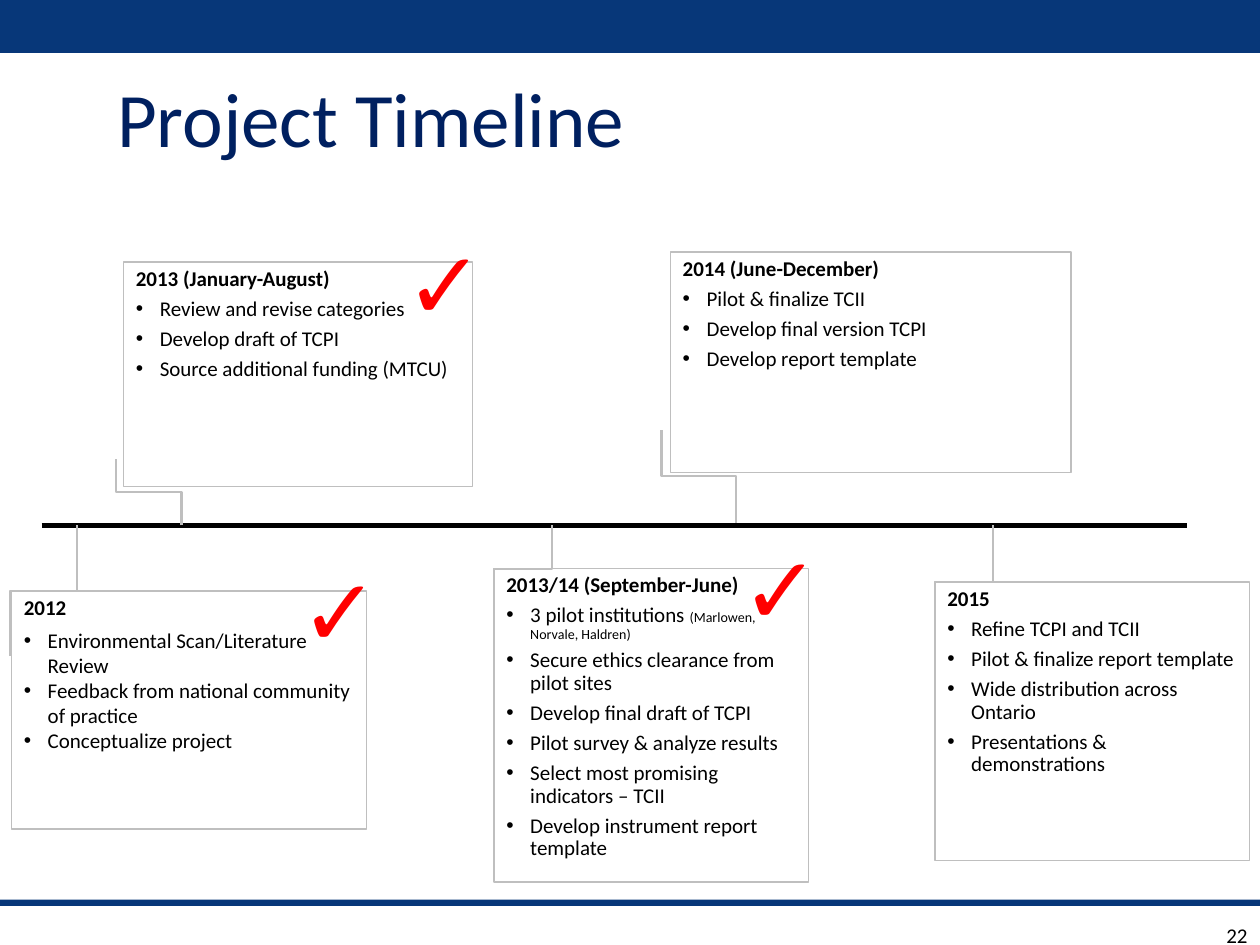
"""Build the project timeline slide."""
from dataclasses import dataclass

import pptx
import pptx.dml.color
import pptx.enum.shapes
import pptx.enum.text
import pptx.util
from lxml import etree
from pptx.dml.color import RGBColor
from pptx.enum.shapes import MSO_CONNECTOR, MSO_SHAPE
from pptx.enum.text import MSO_ANCHOR, MSO_AUTO_SIZE, PP_ALIGN
from pptx.oxml.ns import qn
from pptx.util import Inches, Pt

NAVY = RGBColor(0x07, 0x37, 0x79)
TITLE_BLUE = RGBColor(0x00, 0x20, 0x60)
GREY = RGBColor(0xBF, 0xBF, 0xBF)
BLACK = RGBColor(0, 0, 0)
WHITE = RGBColor(0xFF, 0xFF, 0xFF)
RED = RGBColor(0xFF, 0, 0)
AXIS_Y = 4.17


@dataclass
class Event:
    """A timeline card with its elbow line and optional check mark."""
    heading: str
    items: list[str | tuple[str, str]]
    box: tuple[float, float, float, float]
    start: tuple[float, float]
    end: tuple[float, float]
    check: tuple[float, float] | None = None
    tight: bool = True


EVENTS = [
    Event("2014 (June-December)",
          ["Pilot & finalize TCII", "Develop final version TCPI", "Develop report template"],
          (5.32, 2, 3.18, 1.75), (5.84, 4.15), (5.25, 3.41)),
    Event("2015",
          ["Refine TCPI and TCII", "Pilot & finalize report template",
           "Wide distribution across Ontario", "Presentations & demonstrations"],
          (7.42, 4.62, 2.5, 2.21), (7.88, AXIS_Y), (7.42, 5.07)),
    Event("2012",
          ["Environmental Scan/Literature Review",
           "Feedback from national community of practice", "Conceptualize project"],
          (0.09, 4.69, 2.82, 1.89), (0.61, AXIS_Y), (0.08, 5.21), (2.29, 4.33), False),
    Event("2013 (January-August)",
          ["Review and revise categories", "Develop draft of TCPI",
           "Source additional funding (MTCU)"],
          (0.98, 2.08, 2.77, 1.78), (1.44, AXIS_Y), (0.92, 3.64), (3.12, 1.74)),
    Event("2013/14 (September-June)",
          [("3 pilot institutions ", "(Marlowen, Norvale, Haldren)"),
           "Secure ethics clearance from pilot sites", "Develop final draft of TCPI",
           "Pilot survey & analyze results", "Select most promising indicators – TCII",
           "Develop instrument report template"],
          (3.92, 4.51, 2.5, 2.49), (4.38, AXIS_Y), (3.92, 4.86), (5.79, 4.16)),
]


def style(r, size: float, color: RGBColor = BLACK, bold: bool = False,
          font: str = "Calibri") -> None:
    """Format one run."""
    r.font.name, r.font.size, r.font.bold = font, Pt(size), bold
    r.font.color.rgb = color


def add_rect(s, box: tuple[float, float, float, float], fill: RGBColor):
    """Add a flat rectangle without an outline."""
    sp = s.shapes.add_shape(MSO_SHAPE.RECTANGLE, *map(Inches, box))
    sp.shadow.inherit = False
    sp.fill.solid()
    sp.fill.fore_color.rgb = fill
    sp.line.fill.background()
    return sp


def add_line(s, kind: MSO_CONNECTOR, ends: tuple[float, float, float, float],
             color: RGBColor, width: float):
    """Add a connector without a shadow."""
    cn = s.shapes.add_connector(kind, *map(Inches, ends))
    cn.line.color.rgb = color
    cn.line.width = Pt(width)
    etree.SubElement(cn._element.spPr, qn("a:effectLst"))
    return cn


def add_elbow(s, start: tuple[float, float], end: tuple[float, float]) -> None:
    """Add an elbow that leaves the axis vertically and turns halfway."""
    (x1, y1), (x2, y2) = start, end
    cx, cy = (x1 + x2) / 2, (y1 + y2) / 2
    half_w, half_h = abs(y2 - y1) / 2, abs(x2 - x1) / 2
    cn = add_line(s, MSO_CONNECTOR.ELBOW,
                  (cx - half_w, cy - half_h, cx + half_w, cy + half_h), GREY, 1.25)
    xfrm = cn._element.spPr.find(qn("a:xfrm"))
    upward = y2 < y1
    xfrm.set("rot", str((270 if upward else 90) * 60000))
    if upward:
        xfrm.set("flipV", "1")


def add_text(s, text: str, box: tuple[float, float, float, float], wrap: bool = True):
    """Add a one-paragraph text box and return its paragraph."""
    tf = s.shapes.add_textbox(*map(Inches, box)).text_frame
    tf.word_wrap = wrap
    tf.text = text
    return tf.paragraphs[0]


def add_bullet(p) -> None:
    """Give a paragraph a hanging bullet."""
    pPr = p._p.get_or_add_pPr()
    pPr.set("marL", str(Inches(0.19)))
    pPr.set("indent", str(-Inches(0.19)))
    etree.SubElement(pPr, qn("a:buFont")).set("typeface", "Arial")
    etree.SubElement(pPr, qn("a:buChar")).set("char", "•")


def add_event(s, event: Event) -> None:
    """Draw one card, its elbow and its check mark."""
    sp = add_rect(s, event.box, WHITE)
    sp.line.color.rgb = GREY
    sp.line.width = Pt(0.75)
    tf = sp.text_frame
    tf.word_wrap = True
    tf.vertical_anchor = MSO_ANCHOR.TOP
    for i, item in enumerate([event.heading, *event.items]):
        p = tf.add_paragraph() if i else tf.paragraphs[0]
        p.alignment = PP_ALIGN.LEFT
        main, note = item if isinstance(item, tuple) else (item, "")
        p.text = main
        style(p.runs[0], 12, bold=i == 0)
        if note:
            r = p.add_run()
            r.text = note
            style(r, 8)
        if i == 0 or event.tight:
            p.line_spacing = 0.9
            p.space_after = Pt(4.2)
        if i:
            add_bullet(p)
    add_elbow(s, event.start, event.end)
    if event.check:
        p = add_text(s, "✓", (*event.check, 0.96, 1.01), wrap=False)
        style(p.runs[0], 54, RED, font="Arial")


def main() -> None:
    """Build and save the slide."""
    prs = pptx.Presentation()
    prs.slide_width, prs.slide_height = Inches(10), Inches(7.5)
    s = prs.slides.add_slide(prs.slide_layouts[5])
    add_rect(s, (0, 0, 10, 0.42), NAVY)
    add_rect(s, (0, 7.14, 10, 0.05), NAVY)

    title = s.shapes.title
    title.left, title.top, title.width, title.height = map(Inches, (0.83, 0.42, 7.42, 0.92))
    tf = title.text_frame
    tf.text = "Project Timeline"
    tf.auto_size = MSO_AUTO_SIZE.NONE
    tf.vertical_anchor = MSO_ANCHOR.BOTTOM
    tf.paragraphs[0].alignment = PP_ALIGN.LEFT
    style(tf.paragraphs[0].runs[0], 44, TITLE_BLUE)

    add_line(s, MSO_CONNECTOR.STRAIGHT, (0.33, AXIS_Y, 9.42, AXIS_Y), BLACK, 2.5)
    for event in EVENTS:
        add_event(s, event)

    p = add_text(s, "22", (9.17, 7.27, 0.83, 0.4))
    p.alignment = PP_ALIGN.RIGHT
    style(p.runs[0], 12)
    prs.save("out.pptx")


if __name__ == "__main__":
    main()
